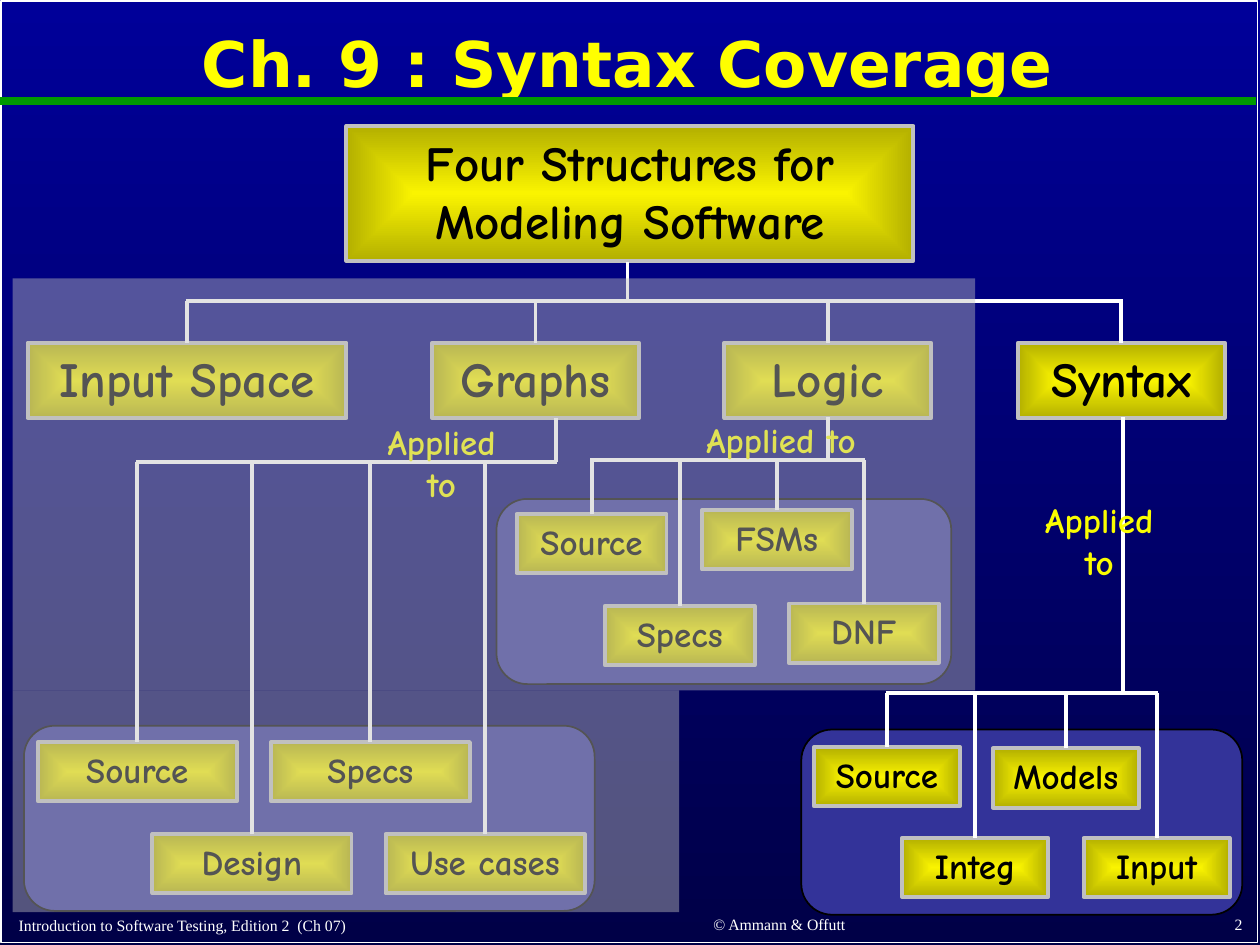
"""Build the syntax coverage slide: four structures for modeling software."""
from lxml import etree
from pptx import Presentation, util as u
from pptx.dml.color import RGBColor
from pptx.enum import shapes, text
from pptx.oxml.ns import qn

WHITE = RGBColor(0xFF, 0xFF, 0xFF)
BLACK = RGBColor(0x00, 0x00, 0x00)
YELLOW = RGBColor(0xFF, 0xFF, 0x00)
LEMON = RGBColor(0xFA, 0xFD, 0x00)
GOLD = RGBColor(0xFA, 0xF4, 0x00)
OLIVE = RGBColor(0xB3, 0xAF, 0x00)
SILVER = RGBColor(0xC0, 0xC0, 0xC0)
GREEN = RGBColor(0x00, 0x99, 0x00)
INDIGO = RGBColor(0x33, 0x33, 0x99)
BLUE = RGBColor(0x00, 0x00, 0x99)
NAVY = RGBColor(0x00, 0x00, 0x47)

RECT = shapes.MSO_SHAPE.RECTANGLE
ROUNDED = shapes.MSO_SHAPE.ROUNDED_RECTANGLE
LEFT, CENTER, RIGHT = text.PP_ALIGN.LEFT, text.PP_ALIGN.CENTER, text.PP_ALIGN.RIGHT
TOP, MIDDLE, BOTTOM = (text.MSO_ANCHOR.TOP, text.MSO_ANCHOR.MIDDLE,
                       text.MSO_ANCHOR.BOTTOM)
GROW = text.MSO_AUTO_SIZE.SHAPE_TO_FIT_TEXT
FIXED = text.MSO_AUTO_SIZE.NONE

HAND = {"name": "Comic Neue", "bold": True}
HEADING = {"name": "DejaVu Sans", "size": u.Pt(36), "bold": True}
FOOTER = {"name": "Times New Roman", "size": u.Pt(9)}


def cm(*inches):
    """Turn grid positions in inches into Cm lengths."""
    return [u.Cm(v * 2.54) for v in inches]


class Deck:
    """Hold the style and the current slide."""

    def __init__(self, width, height):
        """Start a presentation of the given size."""
        self.prs = Presentation()
        self.prs.slide_width, self.prs.slide_height = cm(width, height)
        self.s = self.canvas = None

    def slide(self):
        """Add a title-only slide with a graded background."""
        self.s = self.prs.slides.add_slide(self.prs.slide_layouts[5])
        self.canvas = self.s.shapes
        self.grade(self.s.background.fill, BLUE, NAVY)
        self.s.background.fill.gradient_angle = 270

    def group(self):
        """Send the next elements to a new group."""
        self.canvas = self.s.shapes.add_group_shape().shapes

    def ungroup(self):
        """Send the next elements to the slide."""
        self.canvas = self.s.shapes

    def grade(self, fill, first, last):
        """Give a fill a gradient of two colours."""
        fill.gradient()
        for stop, color in zip(fill.gradient_stops, (first, last)):
            stop.color.rgb = color

    def put_text(self, sp, words, font, color, align=CENTER, anchor=TOP,
                 wrap=True, size=GROW):
        """Put one formatted paragraph into a shape."""
        tf = sp.text_frame
        frame = {"word_wrap": wrap, "auto_size": size, "vertical_anchor": anchor}
        for name, value in frame.items():
            setattr(tf, name, value)
        p = tf.paragraphs[0]
        p.alignment = align
        r = p.add_run()
        r.text = words
        for name, value in font.items():
            setattr(r.font, name, value)
        r.font.color.rgb = color
        return p

    def title(self, words, *box):
        """Place and fill the title placeholder."""
        sp = self.s.shapes.title
        sp.left, sp.top, sp.width, sp.height = cm(*box)
        p = self.put_text(sp, words, HEADING, YELLOW, anchor=MIDDLE, size=FIXED)
        p.line_spacing = 0.9

    def label(self, words, box, font, color, **style):
        """Add a text box."""
        sp = self.canvas.add_textbox(*cm(*box))
        self.put_text(sp, words, font, color, **style)

    def panel(self, box, kind=RECT, fill=None, line=None, width=1.0):
        """Add a preset shape with an optional fill and outline."""
        sp = self.canvas.add_shape(kind, *cm(*box))
        sp.shadow.inherit = False
        for paint, color in ((sp.fill, fill), (sp.line.fill, line)):
            if color is None:
                paint.background()
            else:
                paint.solid()
                paint.fore_color.rgb = color
        if line is not None:
            sp.line.width = u.Pt(width)
        return sp

    def veil(self, *box):
        """Add a translucent cover."""
        sp = self.panel(box, fill=SILVER)
        color = sp._element.spPr.find(".//" + qn("a:srgbClr"))
        etree.SubElement(color, qn("a:alpha"), {"val": "44000"})

    def node(self, words, x, y, w, h, points):
        """Add a gold box whose gradient runs out from its centre."""
        sp = self.panel((x, y, w, h), line=SILVER, width=2.25)
        self.grade(sp.fill, GOLD, OLIVE)
        grad = sp._element.spPr.find(qn("a:gradFill"))
        grad.remove(grad.find(qn("a:lin")))
        shade = etree.SubElement(grad, qn("a:path"), {"path": "shape"})
        etree.SubElement(shade, qn("a:fillToRect"), dict.fromkeys("ltrb", "50000"))
        self.put_text(sp, words, {**HAND, "size": u.Pt(points)}, BLACK)

    def line(self, x1, y1, x2, y2, color=WHITE, width=2.25):
        """Add a straight connector."""
        c = self.canvas.add_connector(shapes.MSO_CONNECTOR.STRAIGHT,
                                      *cm(x1, y1, x2, y2))
        c.line.color.rgb = color
        c.line.width = u.Pt(width)
        etree.SubElement(c._element.spPr, qn("a:effectLst"))

    def branch(self, stem, stem_top, bar, nodes, h, points):
        """Add boxes hung by their centres from a bar under a stem."""
        for words, x, y, w in nodes:
            self.node(words, x, y, w, h, points)
        centers = [x + w / 2 for _, x, _, w in nodes]
        ends = centers + [stem]
        self.line(min(ends) - 0.01, bar, max(ends) + 0.01, bar)
        for center, (_, _, y, _) in zip(centers, nodes):
            self.line(center, y, center, bar)
        self.line(stem, stem_top, stem, bar)


STRUCTURES = [("Input Space", 0.22, 2.72, 2.53), ("Graphs", 3.43, 2.72, 1.64),
              ("Logic", 5.75, 2.72, 1.64), ("Syntax", 8.08, 2.72, 1.64)]

APPLICATIONS = [
    {"panel": (6.36, 5.79, 3.5, 1.47), "label": (8.11, 3.91, 1.23, 0.77),
     "stem": (8.91, 3.31), "bar": 5.5, "w": 1.16,
     "leaves": [("Source", 6.46, 5.93), ("Integ", 7.16, 6.65),
                ("Models", 7.88, 5.94), ("Input", 8.6, 6.65)]},
    {"panel": (3.94, 3.96, 3.61, 1.47), "label": (5.33, 3.27, 1.74, 0.43),
     "stem": (6.57, 3.31), "bar": 3.65, "w": 1.19,
     "leaves": [("Source", 4.1, 4.08), ("Specs", 4.8, 4.81),
                ("FSMs", 5.57, 4.05), ("DNF", 6.26, 4.79)]},
    {"panel": (0.19, 5.76, 4.53, 1.47), "label": (2.89, 3.29, 1.23, 0.77),
     "stem": (4.41, 3.32), "bar": 3.67, "w": 1.58,
     "leaves": [("Source", 0.3, 5.89), ("Design", 1.21, 6.62),
                ("Specs", 2.15, 5.89), ("Use cases", 3.06, 6.62)]},
]

FOOTERS = [
    ("Introduction to Software Testing, Edition 2  (Ch 07)",
     (0.05, 7.19, 4.35, 0.28), LEFT),
    ("© Ammann & Offutt", (4.6, 7.18, 3.17, 0.28), CENTER),
    ("2", (7.88, 7.17, 2.08, 0.29), RIGHT),
]


def main():
    """Draw the slide and save it."""
    deck = Deck(10, 7.5)
    deck.slide()
    deck.panel((0.01, 0.01, 9.97, 7.47), line=WHITE)
    deck.line(0, 0.8, 9.97, 0.8, GREEN, 4.5)
    deck.title("Ch. 9 : Syntax Coverage", 0.01, 0.11, 9.94, 0.84)
    for words, box, align in FOOTERS:
        deck.label(words, box, FOOTER, WHITE, align=align, anchor=BOTTOM,
                   wrap=False, size=FIXED)
    deck.node("Four Structures for Modeling Software", 2.75, 1, 4.5, 1.07, 28)
    deck.group()
    deck.branch(4.98, 2.08, 2.39, STRUCTURES, 0.6, 28)
    for part in APPLICATIONS:
        deck.group()
        deck.panel(part["panel"], ROUNDED, INDIGO, BLACK)
        leaves = [(*leaf, part["w"]) for leaf in part["leaves"]]
        deck.branch(*part["stem"], part["bar"], leaves, 0.47, 20)
        deck.label("Applied to", part["label"], {**HAND, "size": u.Pt(20)}, LEMON)
    deck.ungroup()
    deck.veil(0.1, 5.48, 5.29, 1.76)
    deck.veil(0.1, 2.21, 7.64, 3.27)
    deck.prs.save("out.pptx")


if __name__ == "__main__":
    main()
